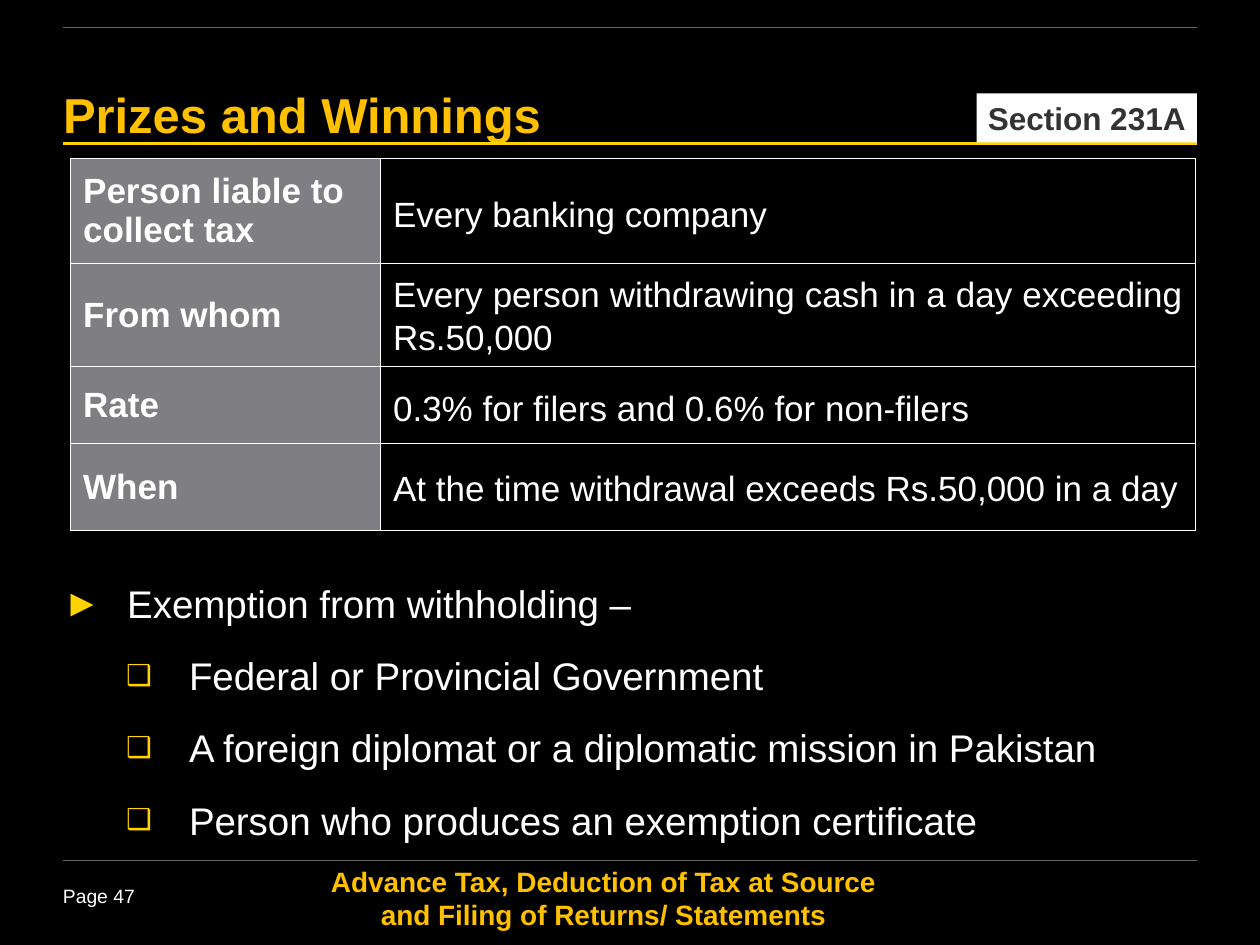
from lxml import etree
from pptx import Presentation
from pptx import util as u
from pptx.dml.color import RGBColor
from pptx.enum import shapes, text
from pptx.oxml import ns

TITLE = "Prizes and Winnings"
SECTION = "Section 231A"
FOOTER = "Advance Tax, Deduction of Tax at Source and Filing of Returns/ Statements"
PAGE = "Page 47"

WHITE, BLACK, GOLD, YELLOW = "FFFFFF", "000000", "FFC000", "FFD200"
GREY, RULE_GREY, DARK = "7F7E82", "646464", "333333"

RULES = [(1.14, YELLOW, 1.5), (6.83, RULE_GREY, 0.25), (0.22, RULE_GREY, 0.5)]

COLUMNS = [2.46, 6.47]
ROWS = [
    (0.83, "Person liable to collect tax", "Every banking company", 1.2),
    (0.82, "From whom", "Every person withdrawing cash in a day exceeding Rs.50,000", 1.1),
    (0.61, "Rate", "0.3% for filers and 0.6% for non-filers", 1.2),
    (0.69, "When", "At the time withdrawal exceeds Rs.50,000 in a day", 1.1),
]

BULLETS = [
    (0, "Exemption from withholding –", 15),
    (1, "Federal or Provincial Government", 15),
    (1, "A foreign diplomat or a diplomatic mission in Pakistan", 15),
    (1, "Person who produces an exemption certificate", 12),
]
LEVELS = [
    {"mark": "►", "size": 100, "left": 0.51, "hang": 0.51, "spacing": 1.3},
    {"mark": "❑", "size": 75, "left": 1, "hang": 0.5, "spacing": 1.0},
]
LEFT, CENTER, JUSTIFY = text.PP_ALIGN.LEFT, text.PP_ALIGN.CENTER, text.PP_ALIGN.JUSTIFY


def color(value):
    return RGBColor.from_string(value)


def place(shape, left, top, width, height):
    shape.left, shape.top = u.Inches(left), u.Inches(top)
    shape.width, shape.height = u.Inches(width), u.Inches(height)


def set_frame(frame, top_inset=0, anchor=text.MSO_ANCHOR.TOP):
    frame.word_wrap = True
    frame.auto_size = text.MSO_AUTO_SIZE.NONE
    frame.vertical_anchor = anchor
    frame.margin_left = frame.margin_right = frame.margin_bottom = 0
    frame.margin_top = u.Inches(top_inset)


def write(paragraph, words, size, fill, bold=False, align=LEFT, spacing=1.0):
    paragraph.alignment = align
    paragraph.line_spacing = spacing
    run = paragraph.add_run()
    run.text = words
    run.font.name = "Arial"
    run.font.size = u.Pt(size)
    run.font.bold = bold
    run.font.color.rgb = color(fill)


def add_element(parent, tag, **attributes):
    element = etree.SubElement(parent, ns.qn(tag))
    for name, value in attributes.items():
        element.set(name, str(value))
    return element


def add_label(slide, box, *style, **options):
    label = slide.shapes.add_textbox(*map(u.Inches, box))
    set_frame(label.text_frame)
    write(label.text_frame.paragraphs[0], *style, **options)


def add_rule(slide, top, fill, weight):
    rule = slide.shapes.add_connector(
        shapes.MSO_CONNECTOR.STRAIGHT, u.Inches(0.5), u.Inches(top), u.Inches(9.5), u.Inches(top))
    rule.line.color.rgb = color(fill)
    rule.line.width = u.Pt(weight)
    add_element(rule._element.spPr, "a:effectLst")


def add_heading(slide):
    badge = slide.shapes.add_shape(
        shapes.MSO_SHAPE.RECTANGLE, *map(u.Inches, (7.75, 0.74, 1.75, 0.39)))
    badge.shadow.inherit = False
    badge.fill.solid()
    badge.fill.fore_color.rgb = color(WHITE)
    badge.line.fill.background()
    title = slide.shapes.title
    place(title, 0.5, 0.71, 7.17, 0.42)
    for shape in (badge, title):
        set_frame(shape.text_frame, 0.04, text.MSO_ANCHOR.MIDDLE)
    write(badge.text_frame.paragraphs[0], SECTION, 18, DARK, True, CENTER, 0.85)
    write(title.text_frame.paragraphs[0], TITLE, 28, GOLD, True, spacing=0.85)


def fill_cell(cell, words, fill, **options):
    properties = cell._tc.get_or_add_tcPr()
    for side in ("a:lnL", "a:lnR", "a:lnT", "a:lnB"):
        border = add_element(properties, side, w=u.Pt(1))
        add_element(add_element(border, "a:solidFill"), "a:srgbClr", val=WHITE)
    cell.fill.solid()
    cell.fill.fore_color.rgb = color(fill)
    cell.vertical_anchor = text.MSO_ANCHOR.MIDDLE
    write(cell.text_frame.paragraphs[0], words, 20, WHITE, **options)


def add_tax_table(slide):
    height = sum(row[0] for row in ROWS)
    table = slide.shapes.add_table(
        len(ROWS), len(COLUMNS), u.Inches(0.56), u.Inches(1.26),
        u.Inches(sum(COLUMNS)), u.Inches(height)).table
    for column, width in zip(table.columns, COLUMNS):
        column.width = u.Inches(width)
    for index, (row_height, heading, detail, spacing) in enumerate(ROWS):
        table.rows[index].height = u.Inches(row_height)
        fill_cell(table.cell(index, 0), heading, GREY, bold=True)
        fill_cell(table.cell(index, 1), detail, BLACK, align=JUSTIFY, spacing=spacing)


def add_bullets(slide):
    body = slide.placeholders[1]
    place(body, 0.5, 4.49, 9.01, 2.26)
    frame = body.text_frame
    set_frame(frame)
    for index, (level, words, after) in enumerate(BULLETS):
        paragraph = frame.add_paragraph() if index else frame.paragraphs[0]
        style = LEVELS[level]
        properties = paragraph._p.get_or_add_pPr()
        properties.set("marL", str(u.Inches(style["left"])))
        properties.set("indent", str(-u.Inches(style["hang"])))
        add_element(add_element(properties, "a:buClr"), "a:srgbClr", val=YELLOW)
        add_element(properties, "a:buSzPct", val=style["size"] * 1000)
        add_element(properties, "a:buFont", typeface="Arial")
        add_element(properties, "a:buChar", char=style["mark"])
        paragraph.level = level
        paragraph.space_before = u.Pt(0)
        paragraph.space_after = u.Pt(after)
        write(paragraph, words, 22, WHITE, align=JUSTIFY, spacing=style["spacing"])


def main():
    presentation = Presentation()
    presentation.slide_width, presentation.slide_height = u.Inches(10), u.Inches(7.5)
    slide = presentation.slides.add_slide(presentation.slide_layouts[1])
    slide.background.fill.solid()
    slide.background.fill.fore_color.rgb = color(BLACK)
    add_label(slide, (2.5, 6.86, 4.58, 0.52), FOOTER, 16, GOLD, bold=True, align=CENTER)
    add_label(slide, (0.5, 7.02, 0.73, 0.22), PAGE, 11, WHITE)
    for rule in RULES:
        add_rule(slide, *rule)
    add_heading(slide)
    add_tax_table(slide)
    add_bullets(slide)
    presentation.save("out.pptx")


if __name__ == "__main__":
    main()
